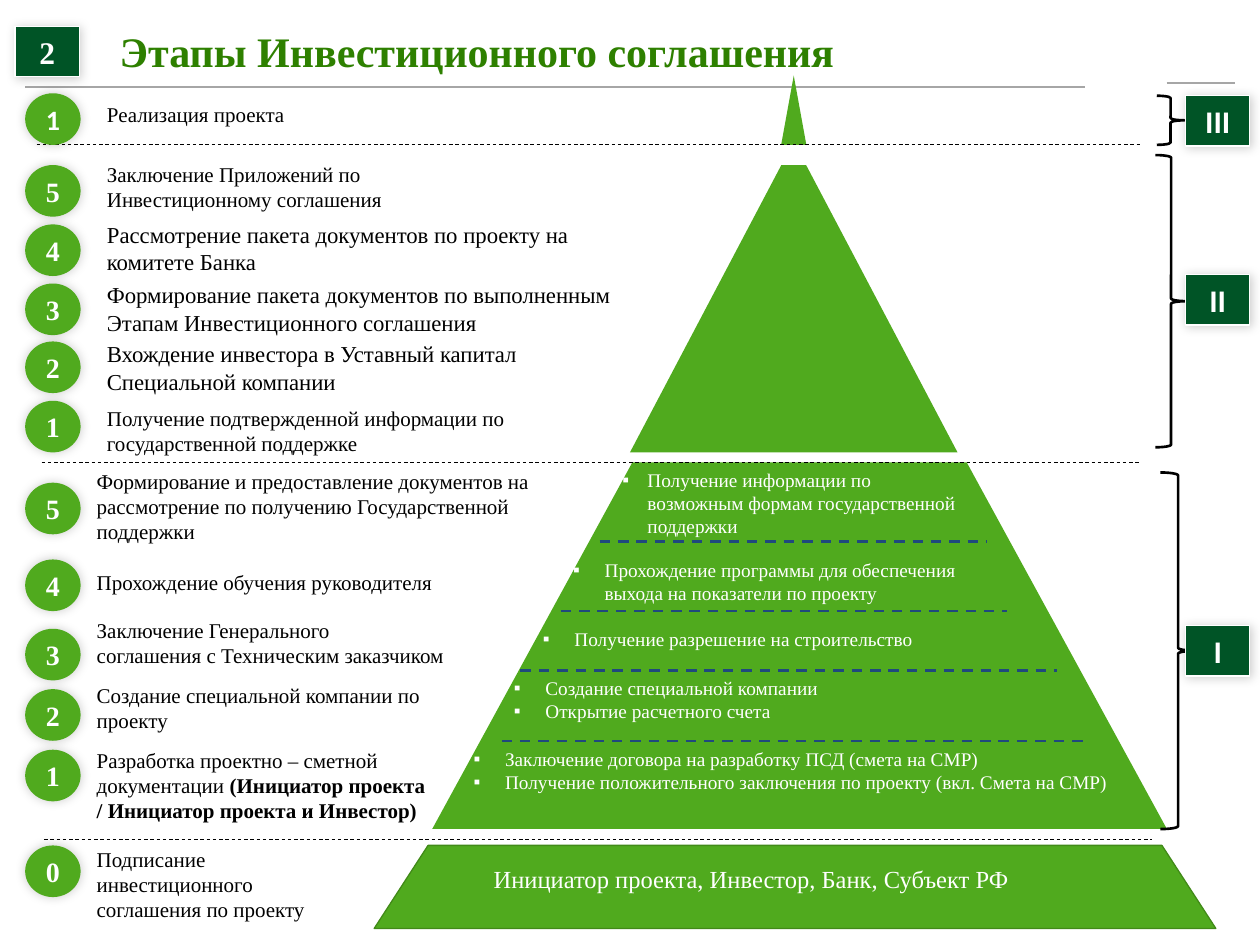
from lxml import etree
from pptx import Presentation
from pptx import util as u
from pptx.dml.color import RGBColor
from pptx.enum import dml, shapes, text
from pptx.oxml.ns import qn

SERIF, SANS = "Times New Roman", "Calibri"
GREEN, DARK_GREEN, EDGE_GREEN, TITLE_GREEN = "50AA1E", "005426", "418A18", "2E8000"
WHITE, BLACK, GREY, NAVY = "FFFFFF", "000000", "A6A6A6", "1F497D"
KIND = shapes.MSO_SHAPE
CIRCLE_LEFT = 14.4

# Steps: number, circle top, label top, label width, label height, size, paragraphs
UPPER_STEPS = [
    ("1", 53.3, 54.7, 210.2, 21.6, 12, ["Реализация проекта"]),
    ("5", 94.3, 88.6, 210.2, 36, 12,
     ["Заключение Приложений по Инвестиционному соглашения"]),
    ("4", 128.2, 122.4, 320.4, 38.9, 13,
     ["Рассмотрение пакета документов по проекту на комитете Банка"]),
    ("3", 162, 157, 320.4, 38.9, 13,
     ["Формирование пакета документов по выполненным Этапам Инвестиционного соглашения"]),
    ("2", 195.1, 190.8, 320.4, 38.9, 13,
     ["Вхождение инвестора в Уставный капитал Специальной компании"]),
    ("1", 229, 228.2, 246.2, 36, 12,
     ["Получение подтвержденной информации по государственной поддержке"]),
]
LOWER_STEPS = [
    ("5", 275.8, 264.2, 266.4, 51.1, 12,
     ["Формирование и предоставление документов на рассмотрение по получению "
      "Государственной поддержки"]),
    ("4", 319.7, 321.8, 254.9, 21.6, 12, ["Прохождение обучения руководителя"]),
    ("3", 359.3, 349.2, 272.2, 36, 12,
     ["Заключение Генерального", "соглашения с Техническим заказчиком"]),
    ("2", 393.8, 386.6, 210.2, 36, 12, ["Создание специальной компании по проекту"]),
    ("1", 428.4, 423.4, 229.7, 51.1, 12,
     [[("Разработка проектно – сметной документации ", False),
       ("(Инициатор проекта", True)],
      [("/ Инициатор проекта и Инвестор)", True)]]),
    ("0", 483.1, 480.2, 155.5, 51.1, 12,
     ["Подписание инвестиционного соглашения по проекту"]),
]

# Pyramid notes: left, top, width, height, indent, paragraphs
PYRAMID_NOTES = [
    (348.5, 264.2, 209.5, 47.5, 14.4,
     ["Получение информации по возможным формам государственной поддержки"]),
    (320.4, 315.4, 238.3, 33.8, 18,
     ["Прохождение программы для обеспечения выхода на показатели по проекту"]),
    (303.1, 355, 289.4, 20.9, 18, ["Получение разрешение на строительство"]),
    (286.6, 383, 198.7, 33.8, 18,
     ["Создание специальной компании", "Открытие расчетного счета"]),
    (263.5, 423.4, 380.2, 33.8, 18,
     ["Заключение договора на разработку ПСД (смета на СМР)",
      "Получение положительного заключения по проекту (вкл. Смета на СМР)"]),
]

# Dividers: from x, to x, y
STAGE_DIVIDERS = [(20.9, 651.6, 82.8), (23.8, 651.6, 264.2), (25.2, 658.1, 479.5)]
NOTE_DIVIDERS = [(342.7, 563.8, 309.6), (320.4, 575.3, 349.2),
                 (297.4, 604.1, 383), (286.6, 620.6, 423.4)]

# Stages: numeral, badge top, brace left, top, width, height
STAGES = [("III", 54.7, 661, 54.7, 15.8, 28.1),
          ("II", 157, 660.2, 88.6, 18, 167),
          ("I", 357.5, 663.1, 270, 20.2, 203.8)]


def color(value):
    return RGBColor.from_string(value)


def box(*lengths):
    return [u.Pt(length) for length in lengths]


def add_run(paragraph, words, size, ink, bold=False, face=SERIF):
    run = paragraph.add_run()
    run.text = words
    font = run.font
    font.size, font.name, font.bold = u.Pt(size), face, bold
    font.color.rgb = color(ink)


def add_outline(slide, kind, place, fill=None, line=None, width=0.75):
    outline = slide.shapes.add_shape(kind, *box(*place))
    outline.shadow.inherit = False
    if fill:
        outline.fill.solid()
        outline.fill.fore_color.rgb = color(fill)
    else:
        outline.fill.background()
    if line:
        outline.line.color.rgb = color(line)
        outline.line.width = u.Pt(width)
    else:
        outline.line.fill.background()
    return outline


def add_marker(slide, kind, place, words, fill, size, line=None, face=SERIF, shadow=(0, 315)):
    """A numbered circle or square with a soft shadow."""
    marker = add_outline(slide, kind, place, fill, line)
    distance, angle = shadow
    effects = marker._element.spPr.find(qn("a:effectLst"))
    outer = etree.SubElement(effects, qn("a:outerShdw"), blurRad=str(u.Pt(6)),
                             dist=str(u.Pt(distance)), dir=str(angle * 60000),
                             rotWithShape="0")
    tint = etree.SubElement(outer, qn("a:srgbClr"), val=BLACK)
    etree.SubElement(tint, qn("a:alpha"), val="20000")
    frame = marker.text_frame
    frame.word_wrap = False
    frame.vertical_anchor = text.MSO_ANCHOR.MIDDLE
    frame.paragraphs[0].alignment = text.PP_ALIGN.CENTER
    add_run(frame.paragraphs[0], words, size, WHITE, True, face)


def add_badge(slide, left, top, words, face):
    add_marker(slide, KIND.RECTANGLE, (left, top, 36.7, 28.8), words, DARK_GREEN, 18,
               WHITE, face, (1, 45))


def add_bullet(paragraph, indent):
    props = paragraph._p.get_or_add_pPr()
    props.set("marL", str(u.Pt(indent)))
    props.set("indent", str(-u.Pt(indent)))
    etree.SubElement(props, qn("a:buFont"), typeface="Arial")
    etree.SubElement(props, qn("a:buChar"), char="▪")


def add_text(slide, place, paragraphs, size, ink, indent=0):
    frame = slide.shapes.add_textbox(*box(*place)).text_frame
    frame.word_wrap = True
    frame.auto_size = text.MSO_AUTO_SIZE.SHAPE_TO_FIT_TEXT
    for index, runs in enumerate(paragraphs):
        paragraph = frame.add_paragraph() if index else frame.paragraphs[0]
        if indent:
            add_bullet(paragraph, indent)
        for words, bold in [(runs, False)] if isinstance(runs, str) else runs:
            add_run(paragraph, words, size, ink, bold)


def add_rule(slide, start, end, y, ink, width, dashed=True):
    rule = slide.shapes.add_connector(shapes.MSO_CONNECTOR.STRAIGHT,
                                      *box(start, y, end, y))
    rule.line.color.rgb = color(ink)
    rule.line.width = u.Pt(width)
    if dashed:
        rule.line.dash_style = dml.MSO_LINE.DASH
    etree.SubElement(rule._element.spPr, qn("a:effectLst"))


def add_title(slide, words):
    title = slide.shapes.title
    title.left, title.top, title.width, title.height = box(68.4, 7.9, 542.9, 41.8)
    frame = title.text_frame
    frame.margin_left = frame.margin_top = frame.margin_right = frame.margin_bottom = 0
    frame.vertical_anchor = text.MSO_ANCHOR.MIDDLE
    frame.paragraphs[0].alignment = text.PP_ALIGN.LEFT
    add_run(frame.paragraphs[0], words, 24, TITLE_GREEN, True)


def add_pyramid(slide):
    add_outline(slide, KIND.ISOSCELES_TRIANGLE, (446.4, 43.2, 14.4, 39.6), GREEN)
    tiers = [((360, 94.3, 187.2, 164.2), 0.527, None),
             ((247, 264.2, 419.8, 209.5), 0.546, None),
             ((213.8, 483.1, 481, 47.5), 0.649, EDGE_GREEN)]
    for place, slope, edge in tiers:
        add_outline(slide, KIND.TRAPEZOID, place, GREEN, edge).adjustments[0] = slope


def add_steps(slide, steps, label_left):
    for number, circle_top, top, width, height, size, paragraphs in steps:
        face = SANS if paragraphs == ["Реализация проекта"] else SERIF
        add_marker(slide, KIND.OVAL, (CIRCLE_LEFT, circle_top, 31.7, 29.5), number,
                   GREEN, 16, face=face)
        add_text(slide, (label_left, top, width, height), paragraphs, size, BLACK)


def main():
    deck = Presentation()
    deck.slide_width, deck.slide_height = box(720, 540)
    slide = deck.slides.add_slide(deck.slide_layouts[5])

    # Heading
    add_rule(slide, 14.4, 619.9, 49.7, GREY, 1, dashed=False)
    add_rule(slide, 666.7, 705.6, 47.5, GREY, 1, dashed=False)
    add_title(slide, "Этапы Инвестиционного соглашения")
    add_badge(slide, 8.6, 15.1, "2", SERIF)

    # Pyramid and dividers
    add_pyramid(slide)
    for divider in STAGE_DIVIDERS:
        add_rule(slide, *divider, BLACK, 0.5)
    for divider in NOTE_DIVIDERS:
        add_rule(slide, *divider, NAVY, 1.5)
    for *place, indent, paragraphs in PYRAMID_NOTES:
        add_text(slide, place, paragraphs, 11, WHITE, indent)
    add_text(slide, (275, 490.3, 357.1, 24.5),
             ["Инициатор проекта, Инвестор, Банк, Субъект РФ"], 14, WHITE)

    # Steps on the left, stages on the right
    add_steps(slide, UPPER_STEPS, 54)
    add_steps(slide, LOWER_STEPS, 48.2)
    for numeral, badge_top, *brace in STAGES:
        add_outline(slide, KIND.RIGHT_BRACE, brace, line=BLACK, width=1.5)
        add_badge(slide, 677.5, badge_top, numeral, SANS)

    deck.save("out.pptx")


if __name__ == "__main__":
    main()
